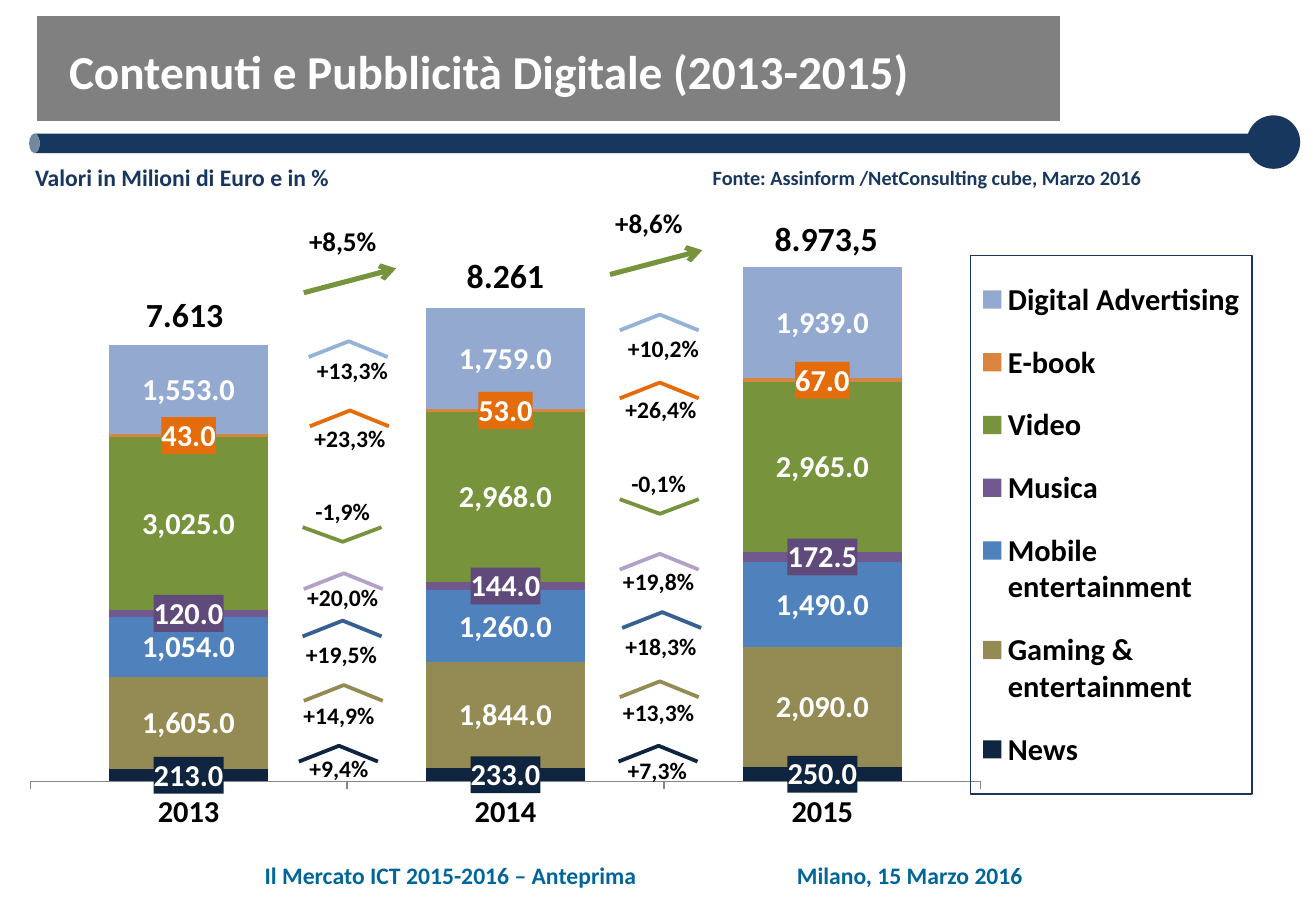
import pptx
import pptx.chart.data
import pptx.dml.color
import pptx.enum.chart
import pptx.enum.shapes
import pptx.enum.text
import pptx.oxml
import pptx.oxml.ns
import pptx.util

PX = 9144  # 100 px to the inch
FACE = "Calibri"
HUES = {
    "navy": "17375E", "grey": "808080", "white": "FFFFFF", "black": "000000",
    "teal": "006699", "axis": "868686",
    "news": "0F243E", "game": "948A54", "mobile": "4F81BD", "music": "71588F",
    "video": "77933C", "book": "DB843D", "ads": "93A9CF",
    "plum": "604A7B", "orange": "E46C0A", "sky": "95B3D7", "blue": "376092",
    "lilac": "B3A2C7",
}
ALIGN = pptx.enum.text.PP_ALIGN
SHAPE = pptx.enum.shapes.MSO_SHAPE

YEARS = ["2013", "2014", "2015"]
# name, values, fill, label fill
SERIES = [
    ("News", (213, 233, 250), "news", "news"),
    ("Gaming & entertainment", (1605, 1844, 2090), "game", None),
    ("Mobile entertainment", (1054, 1260, 1490), "mobile", None),
    ("Musica", (120, 144, 172.5), "music", "plum"),
    ("Video", (3025, 2968, 2965), "video", None),
    ("E-book", (43, 53, 67), "book", "orange"),
    ("Digital Advertising", (1553, 1759, 1939), "ads", None),
]
TOTALS = [("7.613", 85, 237), ("8.261", 349, 205), ("8.973,5", 613, 174)]
MARKS = ["sky", "orange", "video", "lilac", "blue", "game", "news"]
# per mark: text, chevron x and y, label x and y, within the gap's box
GAPS = [
    ((219, 180), "+8,5%", [
        ("+13,3%", 35, 101, 8, 108), ("+23,3%", 36, 158, 6, 164),
        ("-1,9%", 30, 254, 0, 224), ("+20,0%", 31, 292, 0, 295),
        ("+19,5%", 30, 331, -1, 342), ("+14,9%", 31, 384, -3, 392),
        ("+9,4%", 27, 434, -3, 436)]),
    ((471, 165), "+8,6%", [
        ("+10,2%", 39, 94, 12, 105), ("+26,4%", 39, 150, 10, 155),
        ("-0,1%", 39, 246, 8, 216), ("+19,8%", 39, 291, 8, 297),
        ("+18,3%", 41, 339, 10, 350), ("+13,3%", 39, 396, 8, 405),
        ("+7,3%", 38, 449, 7, 452)]),
]


def rgb(hue):
    return pptx.dml.color.RGBColor.from_string(HUES[hue])


def emu(*nums):
    return [pptx.util.Emu(n * PX) for n in nums]


def style(font, size, hue):
    look = {"name": FACE, "size": pptx.util.Pt(size), "bold": True}
    for key, value in look.items():
        setattr(font, key, value)
    font.color.rgb = rgb(hue)


def write(slide, box, text, size, hue="black", align=ALIGN.CENTER, pitch=None):
    frame = slide.shapes.add_textbox(*emu(*box)).text_frame
    frame.word_wrap = True
    par = frame.paragraphs[0]
    par.text = text
    par.alignment = align
    par.line_spacing = pitch
    style(par.runs[0].font, size, hue)


def solid(slide, kind, box, hue, edge=None):
    shape = slide.shapes.add_shape(kind, *emu(*box))
    shape.shadow.inherit = False
    shape.fill.solid()
    shape.fill.fore_color.rgb = rgb(hue)
    if edge:
        shape.line.color.rgb = rgb(edge)
        shape.line.width = pptx.util.Pt(0.75)
    else:
        shape.line.fill.background()
    return shape


def head(slide, box):
    x, y, wide, _ = box
    bar = solid(slide, SHAPE.CAN, (x + 497, y - 400, 16, 1010), "navy")
    bar.rotation = 270
    bar.adjustments[0] = 0.55
    solid(slide, SHAPE.RECTANGLE, (x + 6, y, 843, 87), "grey", "white")
    solid(slide, SHAPE.OVAL, (x + wide - 44, y + 82, 44, 44), "navy")
    write(slide, (x + 23, y + 26, 820, 60),
          "Contenuti e Pubblicità Digitale (2013-2015)", 28, "white",
          ALIGN.LEFT, 0.8)
    write(slide, (x - 5, y + 116, 300, 34), "Valori in Milioni di Euro e in %",
          14, "navy", ALIGN.LEFT)
    write(slide, (x + 550, y + 118, 378, 30),
          "Fonte: Assinform /NetConsulting cube, Marzo 2016", 12, "navy")


def node(tag, inner):
    """Make a chart element from its inner markup."""
    names = pptx.oxml.ns.nsdecls("c", "a")
    return pptx.oxml.parse_xml(f"<c:{tag} {names}>{inner}</c:{tag}>")


def pin(part, x, y, w, h, inner=False):
    """Give a plot area or legend a fixed place in the chart."""
    for old in part.findall(pptx.oxml.ns.qn("c:layout")):
        part.remove(old)
    rules = '<c:layoutTarget val="inner"/>' if inner else ""
    rules += '<c:xMode val="edge"/><c:yMode val="edge"/>'
    for key, value in zip("xywh", (x, y, w, h)):
        rules += f'<c:{key} val="{value}"/>'
    spot = 0 if inner else 1
    part.insert(spot, node("layout", f"<c:manualLayout>{rules}</c:manualLayout>"))


def paint(hue):
    return f'<a:solidFill><a:srgbClr val="{HUES[hue]}"/></a:solidFill>'


def stack(slide, box):
    data = pptx.chart.data.CategoryChartData(number_format="#,##0.0")
    data.categories = YEARS
    for name, nums, _, _ in SERIES:
        data.add_series(name, nums)
    enum = pptx.enum.chart
    chart = slide.shapes.add_chart(
        enum.XL_CHART_TYPE.COLUMN_STACKED, *emu(*box), data).chart
    style(chart.font, 18, "black")
    chart.has_title = False
    plot = chart.plots[0]
    for key, value in {"gap_width": 99, "overlap": 100,
                       "vary_by_categories": False}.items():
        setattr(plot, key, value)
    scale = chart.value_axis
    for key, value in {"minimum_scale": 0, "maximum_scale": 10000,
                       "has_major_gridlines": False, "visible": False}.items():
        setattr(scale, key, value)
    years = chart.category_axis
    years.major_tick_mark = enum.XL_TICK_MARK.OUTSIDE
    years.format.line.color.rgb = rgb("axis")
    style(years.tick_labels.font, 18, "black")

    for series, (_, _, hue, back) in zip(plot.series, SERIES):
        series.format.fill.solid()
        series.format.fill.fore_color.rgb = rgb(hue)
        tags = series.data_labels
        for key, value in {"show_value": True, "number_format": "#,##0.0",
                           "number_format_is_linked": False}.items():
            setattr(tags, key, value)
        style(tags.font, 18, "white")
        if back:
            mask = tags._element.find(pptx.oxml.ns.qn("c:numFmt"))
            mask.addnext(node("spPr", paint(back)))

    chart.has_legend = True
    key = chart.legend
    key.position = enum.XL_LEGEND_POSITION.RIGHT
    key.include_in_layout = False
    style(key.font, 18, "black")
    edge = f'<a:ln w="9525">{paint("navy")}</a:ln>'
    key._element.find(pptx.oxml.ns.qn("c:overlay")).addnext(node("spPr", edge))
    pin(key._element, 0.75, 0.1, 0.22, 0.82)
    area = chart._chartSpace.chart.plotArea
    pin(area, 0.015, 0.029, 0.743, 0.872, inner=True)


def arrow(slide, start, end):
    line = slide.shapes.add_connector(
        pptx.enum.shapes.MSO_CONNECTOR.STRAIGHT, *emu(*start, *end))
    line.line.color.rgb = rgb("video")
    line.line.width = pptx.util.Pt(3)
    names = pptx.oxml.ns.nsdecls("a")
    line.line._get_or_add_ln().append(
        pptx.oxml.parse_xml(f'<a:tailEnd {names} type="arrow"/>'))
    line._element.spPr.append(pptx.oxml.parse_xml(f"<a:effectLst {names}/>"))


def wedge(slide, x, y, hue, down):
    tip, foot = (y + 12, y) if down else (y, y + 13)
    pen = slide.shapes.build_freeform(x, foot, scale=PX)
    pen.add_line_segments([(x + 33, tip), (x + 65, foot)], close=False)
    shape = pen.convert_to_shape()
    shape.shadow.inherit = False
    shape.fill.background()
    shape.line.color.rgb = rgb(hue)
    shape.line.width = pptx.util.Pt(2.25)


def trend(slide, spot, total, rows):
    """Place the yearly changes between two columns."""
    x, y = spot
    write(slide, (x, y, 126, 37), total, 16)
    arrow(slide, (x + 31, y + 61), (x + 107, y + 41))
    for hue, (text, left, top, tx, ty) in zip(MARKS, rows):
        wedge(slide, x + left, y + top, hue, text.startswith("-"))
        write(slide, (x + tx, y + ty, 126, 34), text, 14)


def foot(slide, box):
    x, y, _, high = box
    for left, text in ((0, "Il Mercato ICT 2015-2016 – Anteprima"),
                       (438, "Milano, 15 Marzo 2016")):
        write(slide, (x + left, y, 380, high), text, 14, "teal", ALIGN.LEFT)


def main():
    deck = pptx.Presentation()
    deck.slide_width, deck.slide_height = emu(1083, 750)
    slide = deck.slides.add_slide(deck.slide_layouts[6])
    head(slide, (24, 13, 1046, 150))
    stack(slide, (9, 156, 1053, 541))
    for text, x, y in TOTALS:
        write(slide, (x, y, 134, 44), text, 20)
    for gap in GAPS:
        trend(slide, *gap)
    foot(slide, (208, 704, 818, 34))
    deck.save("out.pptx")


if __name__ == "__main__":
    main()
